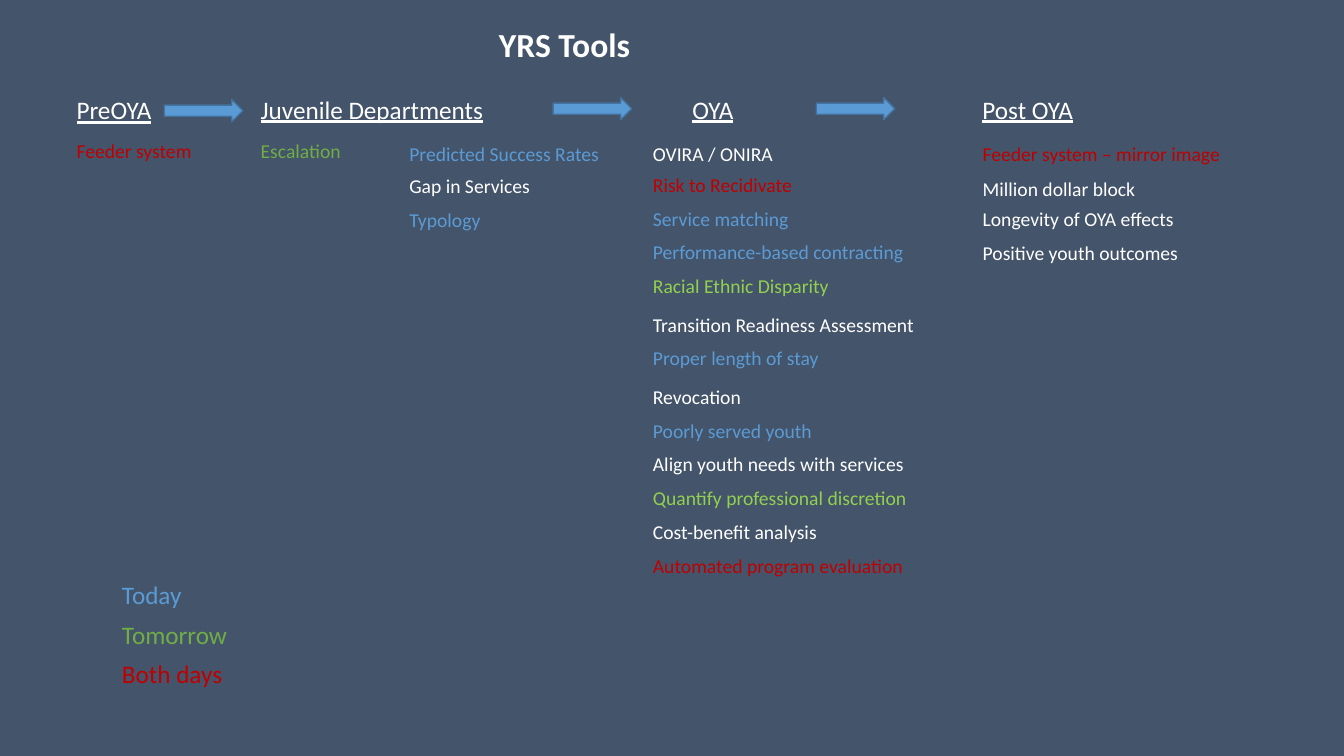
from lxml.etree import SubElement
from pptx import Presentation
from pptx.dml.color import RGBColor as Rgb
from pptx.enum.shapes import MSO_SHAPE as Form
from pptx.enum.text import MSO_ANCHOR as Anchor, MSO_AUTO_SIZE as Fit, PP_ALIGN as Align
from pptx.oxml.ns import qn
from pptx.util import Cm, Pt

HUES = {
    "back": "44546A", "white": "FFFFFF", "blue": "5B9BD5", "edge": "43739E",
    "green": "70AD47", "lime": "92D050", "red": "C00000",
}


def tint(name):
    return Rgb.from_string(HUES[name])


def write(para, text, size=14, hue="white", bold=False, under=False, gap=0):
    """Put formatted text in a paragraph, with gap points above it."""
    props = para._p.get_or_add_pPr()
    props.set("marL", "0")
    props.set("indent", "0")
    SubElement(props, qn("a:buNone"))
    para.alignment = Align.LEFT
    para.line_spacing = 1.0
    para.space_before = Pt(gap)
    para.space_after = Pt(0)
    run = para.add_run()
    run.text = text
    font = run.font
    font.name, font.size, font.bold = "Calibri", Pt(size), bold
    font.underline = under
    font.color.rgb = tint(hue)


class Board:
    """The current slide and its style."""

    def __init__(self, deck):
        self.slide = deck.slides.add_slide(deck.slide_layouts.get_by_name("Comparison"))
        fill = self.slide.background.fill
        fill.solid()
        fill.fore_color.rgb = tint("back")

    def frame(self, shape, box):
        shape.left, shape.top, shape.width, shape.height = map(Cm, box)
        text = shape.text_frame
        text.word_wrap = True
        text.auto_size = Fit.NONE
        text.vertical_anchor = Anchor.TOP
        return text

    def title(self, text, box):
        frame = self.frame(self.slide.shapes.title, box)
        write(frame.paragraphs[0], text, size=24, bold=True)

    def label(self, text, box, **style):
        shape = self.slide.shapes.add_textbox(*map(Cm, box))
        write(self.frame(shape, box).paragraphs[0], text, **style)

    def list(self, slot, box, items, size=14):
        frame = self.frame(self.slide.placeholders[slot], box)
        for i, (text, hue, gap) in enumerate(items):
            para = frame.add_paragraph() if i else frame.paragraphs[0]
            write(para, text, size=size, hue=hue, gap=gap)

    def arrow(self, left, top):
        shape = self.slide.shapes.add_shape(
            Form.RIGHT_ARROW, Cm(left), Cm(top), Cm(1.98), Cm(0.56))
        shape.shadow.inherit = False
        shape.fill.solid()
        shape.fill.fore_color.rgb = tint("blue")
        shape.line.color.rgb = tint("edge")
        shape.line.width = Pt(1)


def main():
    deck = Presentation()
    deck.slide_width, deck.slide_height = Cm(33.87), Cm(19.05)
    board = Board(deck)
    board.title("YRS Tools", (12.32, 0.48, 4.19, 1.27))

    # Stage headings and the arrows between them
    for text, left, top, width in (
        ("PreOYA", 1.68, 2.26, 3.35),
        ("Juvenile Departments", 6.32, 2.24, 6.2),
        ("OYA", 17.2, 2.24, 2.62),
        ("Post OYA", 24.51, 2.24, 3.28),
    ):
        board.label(text, (left, top, width, 1.02), size=18, under=True)
    for left, top in ((4.14, 2.51), (13.94, 2.46), (20.57, 2.46)):
        board.arrow(left, top)

    # Single tools
    board.label("Feeder system", (1.68, 3.38, 4.29, 0.86), hue="red")
    board.label("Escalation", (6.32, 3.38, 3.6, 0.86), hue="green")

    # Tools by stage: text, colour, space above
    board.list(1, (10.06, 3.45, 6.1, 2.54), (
        ("Predicted Success Rates", "blue", 0),
        ("Gap in Services", "white", 6),
        ("Typology", "blue", 7.2),
    ))
    board.list(2, (16.2, 3.45, 8.2, 11.4), (
        ("OVIRA / ONIRA", "white", 0),
        ("Risk to Recidivate", "red", 5.5),
        ("Service matching", "blue", 7),
        ("Performance-based contracting", "blue", 7),
        ("Racial Ethnic Disparity", "lime", 7.2),
        ("Transition Readiness Assessment", "white", 11),
        ("Proper length of stay", "blue", 7.4),
        ("Revocation", "white", 10.5),
        ("Poorly served youth", "blue", 7.4),
        ("Align youth needs with services", "white", 7.4),
        ("Quantify professional discretion", "lime", 7.4),
        ("Cost-benefit analysis", "white", 7.4),
        ("Automated program evaluation", "red", 7.4),
    ))
    board.list(3, (24.51, 3.45, 7.2, 3.4), (
        ("Feeder system – mirror image", "red", 0),
        ("Million dollar block", "white", 8),
        ("Longevity of OYA effects", "white", 5),
        ("Positive youth outcomes", "white", 7.2),
    ))

    # Colour key
    board.list(4, (2.82, 14.48, 3.4, 3.05), (
        ("Today", "blue", 0),
        ("Tomorrow", "green", 6.6),
        ("Both days", "red", 6.6),
    ), size=18)
    deck.save("out.pptx")


if __name__ == "__main__":
    main()
